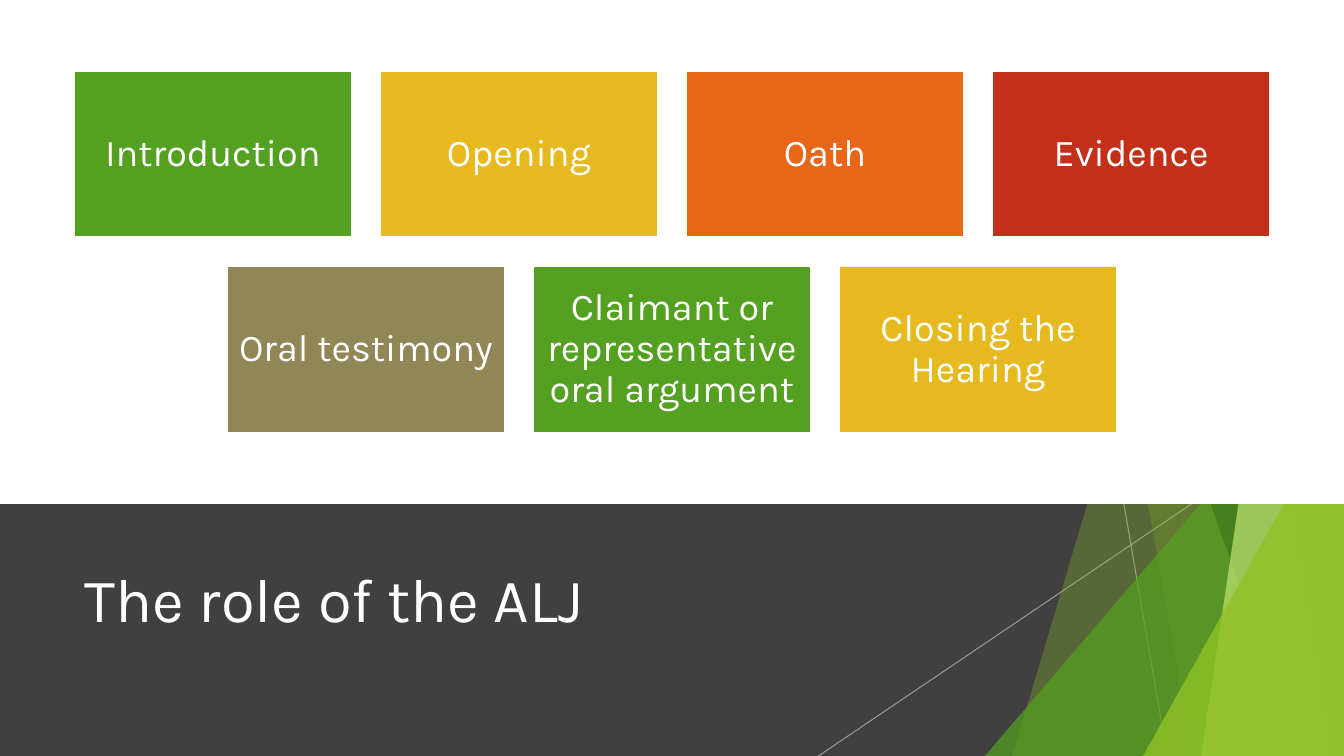
from itertools import cycle

from lxml import etree
from pptx import Presentation
from pptx import util as u
from pptx.dml.color import RGBColor
from pptx.enum import shapes, text
from pptx.oxml import ns

WHITE = RGBColor(0xFF, 0xFF, 0xFF)
DARK = RGBColor(0x40, 0x40, 0x40)
GRAY = RGBColor(0xBF, 0xBF, 0xBF)
LIME = RGBColor(0x90, 0xC2, 0x26)
GREEN = RGBColor(0x54, 0xA0, 0x21)
MOSS = RGBColor(0x3F, 0x78, 0x19)
PALE = RGBColor(0xC0, 0xE4, 0x74)
GOLD = RGBColor(0xE6, 0xB9, 0x1E)
ORANGE = RGBColor(0xE7, 0x66, 0x18)
RED = RGBColor(0xC4, 0x2F, 0x1A)
OLIVE = RGBColor(0x91, 0x86, 0x55)

WIDTH, HEIGHT, SPLIT = 960, 540, 360
TILE_W, TILE_H, GAP_X, GAP_Y, TOP = 198.7, 119.2, 19.9, 20.5, 50.4
ROWS = [
    ["Introduction", "Opening", "Oath", "Evidence"],
    ["Oral testimony", "Claimant or representative oral argument",
     "Closing the Hearing"],
]


class Page:
    font = "Karla"

    def __init__(self, slide):
        self.slide = slide
        self.shapes = slide.shapes

    def fade(self, part, alpha):
        for color in part._element.spPr.iter(ns.qn("a:srgbClr")):
            node = etree.SubElement(color, ns.qn("a:alpha"))
            node.set("val", str(alpha * 1000))

    def paint(self, shape, color):
        shape.shadow.inherit = False
        shape.fill.solid()
        shape.fill.fore_color.rgb = color
        shape.line.fill.background()

    def block(self, x, y, w, h, color, kind=shapes.MSO_SHAPE.RECTANGLE):
        shape = self.shapes.add_shape(
            kind, u.Pt(x), u.Pt(y), u.Pt(w), u.Pt(h))
        self.paint(shape, color)
        return shape

    def wedge(self, x, y, color, alpha):
        shape = self.block(x, y, WIDTH - x, HEIGHT - y, color,
                           shapes.MSO_SHAPE.ISOSCELES_TRIANGLE)
        shape.adjustments[0] = 1
        self.fade(shape, alpha)

    def facet(self, upper, lower, color, alpha):
        pen = self.shapes.build_freeform(u.Pt(upper), 0)
        pen.add_line_segments([
            (u.Pt(WIDTH), 0), (u.Pt(WIDTH), u.Pt(HEIGHT)),
            (u.Pt(lower), u.Pt(HEIGHT))])
        shape = pen.convert_to_shape()
        self.paint(shape, color)
        self.fade(shape, alpha)

    def ray(self, upper, lower):
        line = self.shapes.add_connector(
            shapes.MSO_CONNECTOR.STRAIGHT,
            u.Pt(upper), u.Pt(SPLIT), u.Pt(lower), u.Pt(HEIGHT))
        line.line.color.rgb = GRAY
        line.line.width = u.Pt(0.75)
        self.fade(line, 70)
        etree.SubElement(line._element.spPr, ns.qn("a:effectLst"))

    def label(self, shape, words, size, align):
        frame = shape.text_frame
        frame.text = words
        frame.word_wrap = True
        frame.auto_size = text.MSO_AUTO_SIZE.NONE
        frame.vertical_anchor = text.MSO_ANCHOR.MIDDLE
        para = frame.paragraphs[0]
        para.alignment = align
        para.font.name = self.font
        para.font.size = u.Pt(size)
        para.font.color.rgb = WHITE
        return frame

    def title(self, words, x, y, w, h):
        shape = self.shapes.title
        shape.left, shape.top = u.Pt(x), u.Pt(y)
        shape.width, shape.height = u.Pt(w), u.Pt(h)
        self.label(shape, words, 44, text.PP_ALIGN.LEFT)
        self.shapes._spTree.append(shape._element)

    def tile(self, words, x, y, color):
        shape = self.block(x, y, TILE_W, TILE_H, color)
        shape.line.color.rgb = WHITE
        shape.line.width = u.Pt(1.5)
        frame = self.label(shape, words, 27, text.PP_ALIGN.CENTER)
        frame.margin_left = frame.margin_right = u.Pt(8)
        frame.margin_top = frame.margin_bottom = u.Pt(8)
        frame.paragraphs[0].line_spacing = 0.9


def main():
    deck = Presentation()
    deck.slide_width, deck.slide_height = u.Pt(WIDTH), u.Pt(HEIGHT)
    page = Page(deck.slides.add_slide(deck.slide_layouts[5]))

    page.block(0, SPLIT, WIDTH, HEIGHT - SPLIT, DARK)
    page.ray(802.8, 833.8)
    page.ray(851, 584.6)
    page.facet(884, 723, LIME, 30)
    page.facet(756, 852, LIME, 20)
    page.wedge(703.5, 240, GREEN, 72)
    page.facet(735, 929.5, MOSS, 70)
    page.facet(938, 858, PALE, 70)
    page.facet(861, 949, LIME, 65)
    page.wedge(816.5, 283, LIME, 80)
    page.title("The role of the ALJ", 53.3, 375, 677, 104)
    page.block(0, 0, WIDTH, SPLIT, WHITE)

    colors = cycle([GREEN, GOLD, ORANGE, RED, OLIVE])
    for row, names in enumerate(ROWS):
        span = len(names) * (TILE_W + GAP_X) - GAP_X
        left = (WIDTH - span) / 2
        for col, name in enumerate(names):
            page.tile(name, left + col * (TILE_W + GAP_X),
                      TOP + row * (TILE_H + GAP_Y), next(colors))

    deck.save("out.pptx")


if __name__ == "__main__":
    main()
